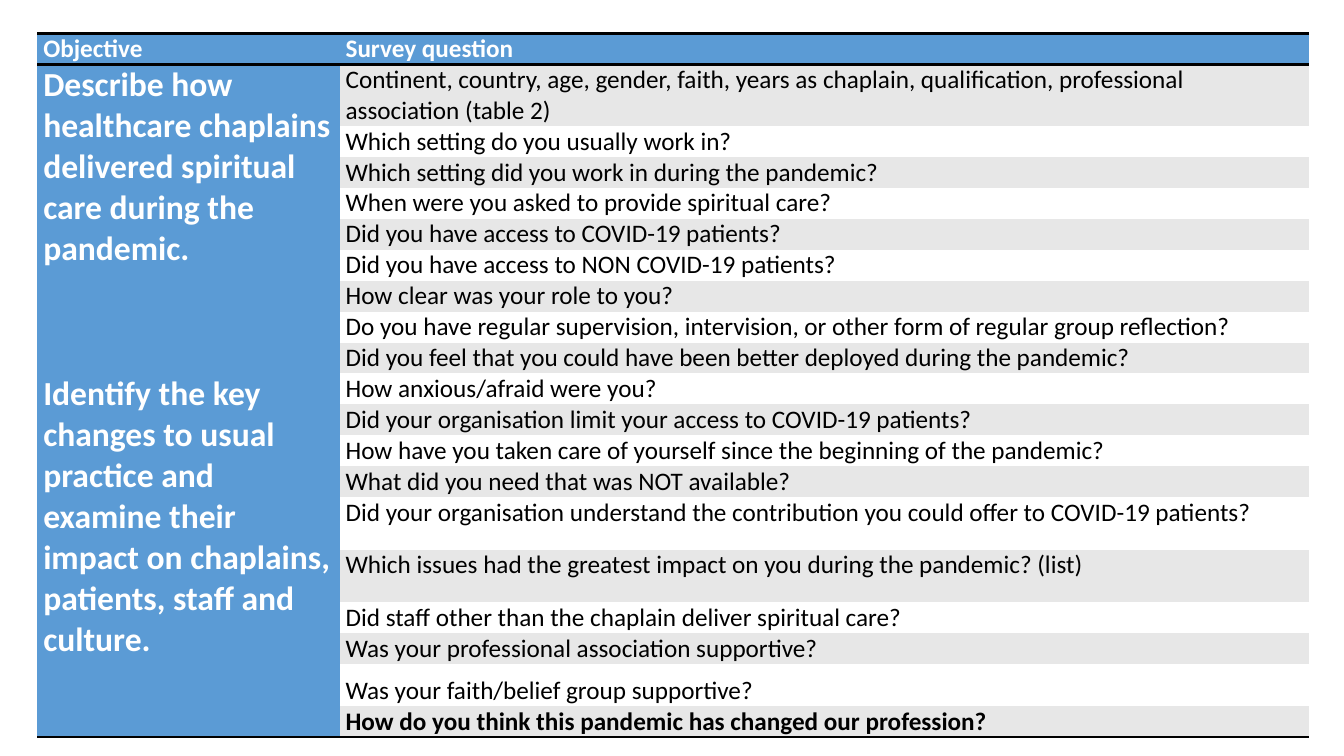
"""Build the slide that links survey questions to study objectives."""
from lxml import etree
from pptx import Presentation
from pptx import util as u
from pptx.dml.color import RGBColor
from pptx.enum import text
from pptx.oxml import ns

BLUE = RGBColor(0x5B, 0x9B, 0xD5)
GREY = RGBColor(0xE7, 0xE7, 0xE7)
WHITE = RGBColor(0xFF, 0xFF, 0xFF)
BLACK = RGBColor(0x00, 0x00, 0x00)
TOP, BOTTOM = text.MSO_ANCHOR.TOP, text.MSO_ANCHOR.BOTTOM

HEADER = ("Objective", "Survey question")
OBJECTIVES = {
    (1, 9): "Describe how healthcare chaplains delivered spiritual care during the pandemic.",
    (10, 19): "Identify the key changes to usual practice and examine their impact on "
              "chaplains, patients, staff and culture.",
}
QUESTIONS = [
    "Continent, country, age, gender, faith, years as chaplain, qualification, "
    "professional association (table 2)",
    "Which setting do you usually work in?",
    "Which setting did you work in during the pandemic?",
    "When were you asked to provide spiritual care?",
    "Did you have access to COVID-19 patients?",
    "Did you have access to NON COVID-19 patients?",
    "How clear was your role to you?",
    "Do you have regular supervision, intervision, or other form of regular group reflection?",
    "Did you feel that you could have been better deployed during the pandemic?",
    "How anxious/afraid were you?",
    "Did your organisation limit your access to COVID-19 patients?",
    "How have you taken care of yourself since the beginning of the pandemic?",
    "What did you need that was NOT available?",
    "Did your organisation understand the contribution you could offer to COVID-19 patients?",
    "Which issues had the greatest impact on you during the pandemic? (list)",
    "Did staff other than the chaplain deliver spiritual care?",
    "Was your professional association supportive?",
    "Was your faith/belief group supportive?",
    "How do you think this pandemic has changed our profession?",
]
LAST = len(QUESTIONS)
COLUMN_WIDTHS = (7.62, 24.43)
ROW_HEIGHT = 0.78
TALL_ROWS = {1: 1.55, 14: 1.32, 15: 1.32, 18: 1.06}
TOP_ROWS = {9, 10, 14, 15}


class Builder:
    """Hold the text style and the current slide."""

    font = "Calibri"
    size = 18
    rule = 2

    def __init__(self, prs):
        self.s = prs.slides.add_slide(prs.slide_layouts[6])

    def table(self, left, top, widths, heights):
        """Add a plain table with the given column widths and row heights."""
        box = [u.Cm(v) for v in (left, top, sum(widths), sum(heights))]
        tbl = self.s.shapes.add_table(len(heights), len(widths), *box).table
        tbl.horz_banding = False
        for col, width in zip(tbl.columns, widths):
            col.width = u.Cm(width)
        for row, height in zip(tbl.rows, heights):
            row.height = u.Cm(height)
        return tbl

    def cell(self, cell, fill, anchor=BOTTOM, ruled=""):
        """Set the fill, insets, anchor and black rules of a cell."""
        layout = {"margin_left": u.Cm(0.15), "margin_right": u.Cm(0.15),
                  "margin_top": 0, "margin_bottom": 0, "vertical_anchor": anchor}
        for name, value in layout.items():
            setattr(cell, name, value)
        cell.fill.solid()
        cell.fill.fore_color.rgb = fill
        pr = cell._tc.get_or_add_tcPr()
        for i, side in enumerate("LRTB"):
            ln = etree.Element(ns.qn(f"a:ln{side}"))
            pr.insert(i, ln)
            if side in ruled:
                ln.set("w", str(u.Pt(self.rule)))
                solid = etree.SubElement(ln, ns.qn("a:solidFill"))
                etree.SubElement(solid, ns.qn("a:srgbClr"), val=str(BLACK))
            else:
                etree.SubElement(ln, ns.qn("a:noFill"))

    def label(self, cell, words, color, bold=True, size=None):
        """Put one run of text in a cell."""
        r = cell.text_frame.paragraphs[0].add_run()
        r.text = words
        style = {"name": self.font, "size": u.Pt(size or self.size), "bold": bold}
        for name, value in style.items():
            setattr(r.font, name, value)
        r.font.color.rgb = color


def main():
    """Build and save the slide."""
    prs = Presentation()
    prs.slide_width, prs.slide_height = u.Cm(33.87), u.Cm(19.05)
    b = Builder(prs)
    heights = [TALL_ROWS.get(row, ROW_HEIGHT) for row in range(LAST + 1)]
    tbl = b.table(0.94, 0.84, COLUMN_WIDTHS, heights)

    for col, title in enumerate(HEADER):
        b.cell(tbl.cell(0, col), BLUE, ruled="TB")
        b.label(tbl.cell(0, col), title, WHITE)

    for row, question in enumerate(QUESTIONS, 1):
        ruled = {1: "T", LAST: "B"}.get(row, "")
        anchor = TOP if row in TOP_ROWS else BOTTOM
        b.cell(tbl.cell(row, 1), GREY if row % 2 else WHITE, anchor, ruled)
        b.label(tbl.cell(row, 1), question, BLACK, bold=row == LAST)

    for (first, last), objective in OBJECTIVES.items():
        for row in range(first, last + 1):
            ruled = ("T" if row == 1 else "") + ("B" if last == LAST and row in (first, last) else "")
            b.cell(tbl.cell(row, 0), BLUE, TOP, ruled)
        tbl.cell(first, 0).merge(tbl.cell(last, 0))
        b.label(tbl.cell(first, 0), objective, WHITE, size=24)

    prs.save("out.pptx")


if __name__ == "__main__":
    main()
